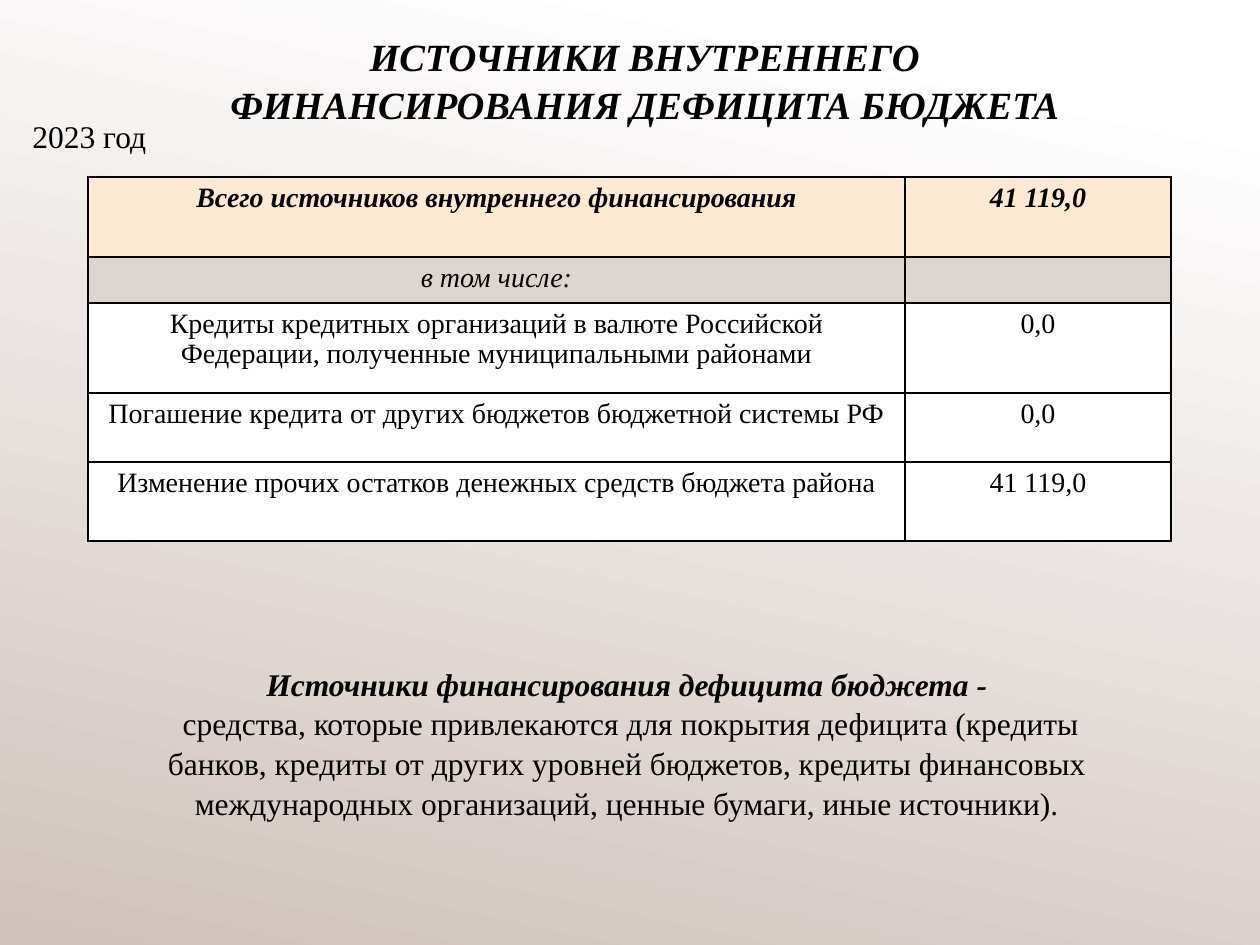
from lxml.etree import SubElement
from pptx import Presentation
from pptx.dml.color import RGBColor
from pptx.enum.shapes import MSO_SHAPE
from pptx.enum.text import MSO_ANCHOR, PP_ALIGN
from pptx.oxml.ns import qn
from pptx.util import Pt

PX = 914400 / 126


def px(*lengths):
    return [round(length * PX) for length in lengths]


def write(frame, *lines, size=18, bold=False, italic=False,
          align=PP_ALIGN.CENTER, anchor=MSO_ANCHOR.TOP, spacing=1.05):
    """Fill a text frame, one paragraph per line; a line may be (text, bold italic)."""
    frame.word_wrap = True
    frame.vertical_anchor = anchor
    for index, line in enumerate(lines):
        text, emphasis = line if isinstance(line, tuple) else (line, False)
        para = frame.paragraphs[0] if index == 0 else frame.add_paragraph()
        para.text = text
        para.alignment = align
        para.line_spacing = spacing
        for span in para.runs:
            span.font.name = "Times New Roman"
            span.font.size = Pt(size)
            span.font.bold = bold or emphasis
            span.font.italic = italic or emphasis
            span.font.color.rgb = RGBColor.from_string("000000")


deck = Presentation()
deck.slide_width, deck.slide_height = px(1260, 945)
page = deck.slides.add_slide(deck.slide_layouts[6])

# Background
backdrop = page.background.fill
backdrop.gradient()
backdrop.gradient_angle = 258
for stop, position, color in zip(backdrop.gradient_stops, (0.1, 1), ("FFFFFF", "D0C2BC")):
    stop.position = position
    stop.color.rgb = RGBColor.from_string(color)

# Heading and year
title = page.shapes.add_textbox(*px(39, 38, 1221, 82))
write(title.text_frame, "ИСТОЧНИКИ ВНУТРЕННЕГО \vФИНАНСИРОВАНИЯ ДЕФИЦИТА БЮДЖЕТА ",
      size=22, bold=True, italic=True, anchor=MSO_ANCHOR.MIDDLE)
year = page.shapes.add_textbox(*px(20, 109, 157, 50))
write(year.text_frame, "2023 год", align=PP_ALIGN.LEFT)

# Table: label, value, row height, fill, bold, italic
rows = [
    ("Всего источников внутреннего финансирования", "41 119,0", 80, "FEE9D2", True, True),
    ("в том числе:", "", 46, "DCD5D0", False, True),
    ("Кредиты кредитных организаций в валюте Российской Федерации, "
     "полученные муниципальными районами", "0,0", 90, "FFFFFF", False, False),
    ("Погашение кредита от других бюджетов бюджетной системы РФ", "0,0",
     69, "FFFFFF", False, False),
    ("Изменение прочих остатков денежных средств бюджета района", "41 119,0",
     79, "FFFFFF", False, False),
]
widths = (817, 266)
table_height = sum(row[2] for row in rows)
table = page.shapes.add_table(len(rows), 2, *px(88, 177, sum(widths), table_height)).table
for column, width in zip(table.columns, px(*widths)):
    column.width = width
for row, (label, value, height, fill, bold, italic) in zip(table.rows, rows):
    row.height = px(height)[0]
    for cell, text in zip(row.cells, (label, value)):
        write(cell.text_frame, text, size=16, bold=bold, italic=italic, spacing=0.96)
        if not text:
            cell.text_frame.paragraphs[0].font.size = Pt(16)
        properties = cell._tc.get_or_add_tcPr()
        for side in ("a:lnL", "a:lnR", "a:lnT", "a:lnB"):
            border = SubElement(properties, qn(side), w=str(Pt(1)))
            SubElement(SubElement(border, qn("a:solidFill")), qn("a:srgbClr"), val="000000")
        cell.fill.solid()
        cell.fill.fore_color.rgb = RGBColor.from_string(fill)

# Definition
definition = page.shapes.add_shape(MSO_SHAPE.ROUNDED_RECTANGLE, *px(123, 650, 1008, 227))
definition.adjustments[0] = 0.1
definition.shadow.inherit = False
definition.fill.background()
definition.line.fill.background()
write(definition.text_frame,
      ("Источники финансирования дефицита бюджета -", True),
      " средства, которые привлекаются для покрытия дефицита (кредиты банков, "
      "кредиты от других уровней бюджетов, кредиты финансовых международных "
      "организаций, ценные бумаги, иные источники).")

deck.save("out.pptx")
